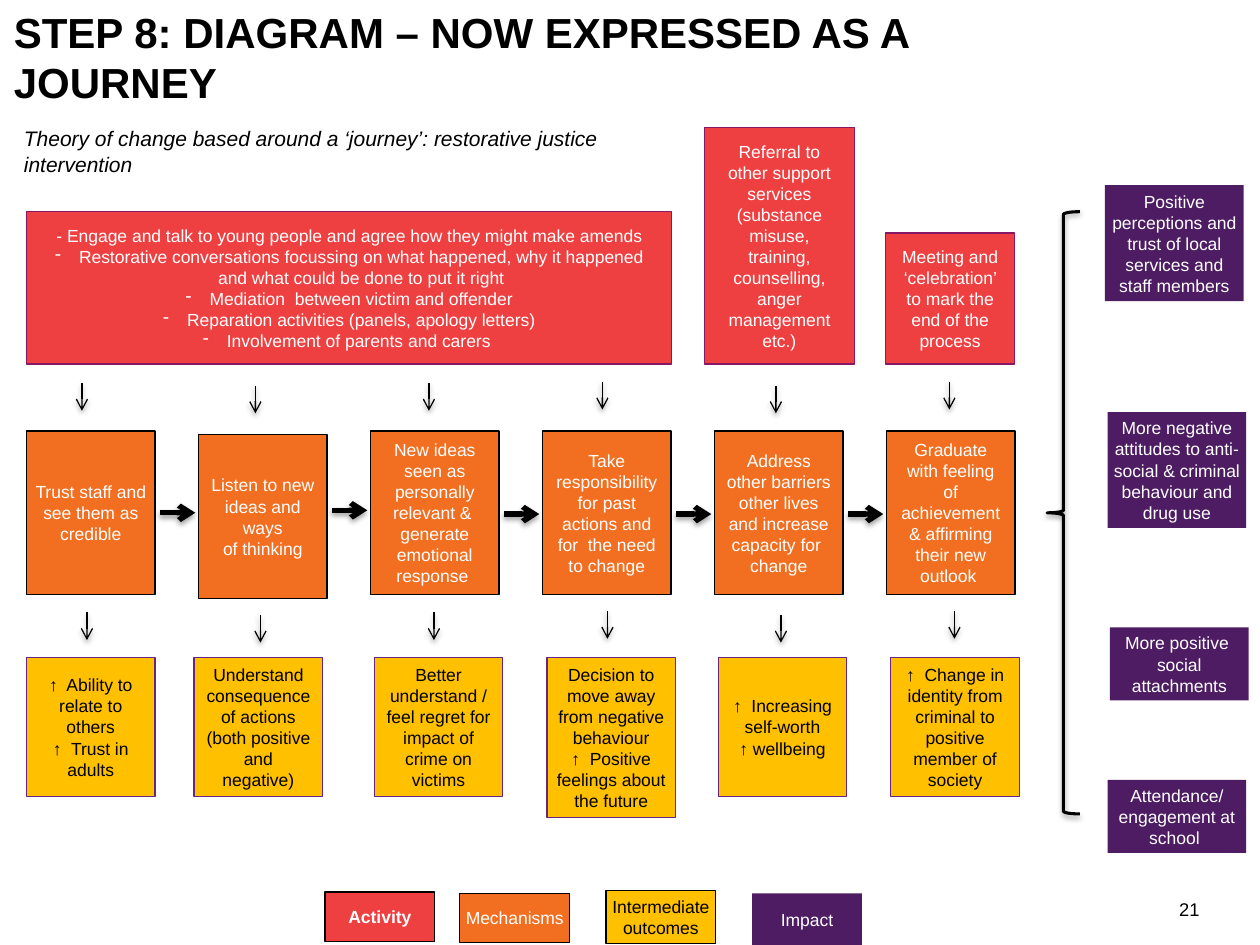
from lxml import etree
from pptx import Presentation
from pptx import util as u
from pptx.dml.color import RGBColor
from pptx.enum import shapes, text
from pptx.oxml.ns import qn

COLOURS = {
    "activity": "EE4041", "mechanism": "F26F21", "outcome": "FFC000",
    "impact": "4D1C62", "activity_edge": "881866", "outcome_edge": "662583",
    "black": "000000", "white": "FFFFFF",
}
COLUMN_PITCH = 1.365
ARROW_PITCH = 1.377
CARD_WIDTH = 1.02
TIGHT = (0.04, 0.04)
NORMAL = (0.1, 0.05)


def colour(name):
    return RGBColor.from_string(COLOURS[name])


def add_child(parent, tag, **attributes):
    child = etree.SubElement(parent, qn(tag))
    for name, value in attributes.items():
        child.set(name, str(value))
    return child


def write_text(shape, content, size=10, fill="white", bold=False, italic=False,
               align="CENTER", anchor="MIDDLE", insets=NORMAL, grow=False, bullets=False):
    """Write one paragraph per line; with bullets, all but the first get a dash."""
    frame = shape.text_frame
    frame.word_wrap = True
    frame.auto_size = text.MSO_AUTO_SIZE.SHAPE_TO_FIT_TEXT if grow else text.MSO_AUTO_SIZE.NONE
    frame.vertical_anchor = text.MSO_ANCHOR[anchor]
    frame.margin_left = frame.margin_right = u.Inches(insets[0])
    frame.margin_top = frame.margin_bottom = u.Inches(insets[1])
    for index, line in enumerate(content.split("\n")):
        paragraph = frame.add_paragraph() if index else frame.paragraphs[0]
        paragraph.alignment = text.PP_ALIGN[align]
        if bullets and index:
            properties = paragraph._p.get_or_add_pPr()
            properties.set("marL", str(u.Inches(0.19)))
            properties.set("indent", str(-u.Inches(0.19)))
            add_child(properties, "a:buFontTx")
            add_child(properties, "a:buChar", char="-")
        run = paragraph.add_run()
        run.text = line
        font = run.font
        font.name, font.size = "Arial", u.Pt(size)
        font.bold, font.italic = bold, italic
        font.color.rgb = colour(fill)


def add_label(slide, box, content, **text_format):
    label = slide.shapes.add_textbox(*map(u.Inches, box))
    write_text(label, content, insets=(0, 0), fill="black", **text_format)


def add_card(slide, box, kind, content, edge=None, **text_format):
    card = slide.shapes.add_shape(shapes.MSO_SHAPE.RECTANGLE, *map(u.Inches, box))
    card.shadow.inherit = False
    card.fill.solid()
    card.fill.fore_color.rgb = colour(kind)
    if edge:
        card.line.color.rgb = colour(edge)
        card.line.width = u.Pt(0.75)
    else:
        card.line.fill.background()
    write_text(card, content, fill="black" if kind == "outcome" else "white", **text_format)


def add_soft_shadow(shape):
    effects = add_child(shape._element.spPr, "a:effectLst")
    shadow = add_child(effects, "a:outerShdw", blurRad=u.Pt(3.1), dist=u.Pt(1.6),
                       dir=90 * 60000, rotWithShape=0)
    shade = add_child(shadow, "a:srgbClr", val=COLOURS["black"])
    add_child(shade, "a:alpha", val=38000)


def add_arrow(slide, left, top, across=0, down=0, width=0.75):
    arrow = slide.shapes.add_connector(
        shapes.MSO_CONNECTOR.STRAIGHT,
        *map(u.Inches, (left, top, left + across, top + down)))
    arrow.line.color.rgb = colour("black")
    arrow.line.width = u.Pt(width)
    add_child(arrow.line._get_or_add_ln(), "a:tailEnd", type="arrow")
    add_soft_shadow(arrow)


def add_activities(slide, left, bottom):
    activities = [  # offset, width, height, text
        (0, 5.12, 1.21,
         "- Engage and talk to young people and agree how they might make amends\n"
         "Restorative conversations focussing on what happened, why it happened "
         "and what could be done to put it right\n"
         "Mediation  between victim and offender\n"
         "Reparation activities (panels, apology letters)\n"
         "Involvement of parents and carers "),
        (5.38, 1.19, 1.88,
         "Referral to other support services (substance misuse, training, "
         "counselling, anger management etc.)"),
        (6.82, CARD_WIDTH, 1.04, "Meeting and ‘celebration’ to mark the end of the process"),
    ]
    for offset, width, height, content in activities:
        add_card(slide, (left + offset, bottom - height, width, height), "activity",
                 content, edge="activity_edge", bullets=True)


def add_mechanisms(slide, left, top):
    mechanisms = [  # vertical offset, insets, text
        (0, TIGHT, "Trust staff and see them as credible"),
        (0.03, TIGHT, "Listen to new ideas and ways\nof thinking"),
        (0, TIGHT, "New ideas seen as personally relevant &  generate emotional response "),
        (0, NORMAL, "Take responsibility for past\nactions and for  the need to change"),
        (0, NORMAL, "Address other barriers other lives and increase capacity for  change"),
        (0, NORMAL, "Graduate with feeling of achievement & affirming their new\noutlook "),
    ]
    for column, (offset, insets, content) in enumerate(mechanisms):
        add_card(slide, (left + column * COLUMN_PITCH, top + offset, CARD_WIDTH, 1.3),
                 "mechanism", content, edge="black", insets=insets, grow=insets == TIGHT)
    # Thick arrows from one step to the next
    for column, offset in enumerate((0.65, 0.63, 0.66, 0.66, 0.66)):
        add_arrow(slide, left + 1.06 + column * COLUMN_PITCH, top + offset,
                  across=0.28, width=3)


def add_outcomes(slide, left, top):
    outcomes = [  # horizontal offset, height, insets, text
        (0, 1.1, NORMAL, "↑  Ability to relate to others\n↑  Trust in adults"),
        (1.33, 1.1, NORMAL,
         "Understand consequence\nof actions (both positive and\nnegative)"),
        (2.76, 1.1, NORMAL, "Better understand / feel regret for impact of crime on victims"),
        (4.13, 1.27, (0.04, 0.05),
         "Decision to move away from negative behaviour\n"
         "↑  Positive feelings about the future"),
        (5.49, 1.1, NORMAL, "↑  Increasing self-worth\n↑ wellbeing"),
        (6.86, 1.1, NORMAL, "↑  Change in identity from criminal to positive member of society"),
    ]
    for offset, height, insets, content in outcomes:
        add_card(slide, (left + offset, top, CARD_WIDTH, height), "outcome", content,
                 edge="outcome_edge", insets=insets)


def add_down_arrows(slide, left, top):
    for column, offset in enumerate((0.01, 0.03, 0.01, 0, 0.03, 0)):
        add_arrow(slide, left + column * ARROW_PITCH, top + offset, down=0.22)


def add_impacts(slide, left, top):
    # Brace that gathers the journey into its impacts
    brace = slide.shapes.add_shape(shapes.MSO_SHAPE.RIGHT_BRACE, u.Inches(left),
                                   u.Inches(top + 0.21), u.Inches(0.26), u.Inches(4.78))
    brace.rotation = 180
    brace.fill.background()
    brace.line.color.rgb = colour("black")
    brace.line.width = u.Pt(1.75)
    add_soft_shadow(brace)
    impacts = [  # offsets, height, text
        (0.46, 0, 0.92, "Positive perceptions and trust of local services and staff members"),
        (0.48, 1.8, 0.92,
         "More negative attitudes to anti-social & criminal behaviour and drug use"),
        (0.5, 3.51, 0.58, "More positive  social attachments"),
        (0.48, 4.72, 0.58, "Attendance/engagement at school "),
    ]
    for across, down, height, content in impacts:
        add_card(slide, (left + across, top + down, 1.1, height), "impact", content,
                 insets=TIGHT, grow=True)


def add_legend(slide, left, top):
    entries = [  # offsets, height, kind, text
        (0, 0.01, 0.39, "activity", "Activity"),
        (1.07, 0.02, 0.39, "mechanism", "Mechanisms"),
        (2.23, 0, 0.42, "outcome", "Intermediate outcomes"),
        (3.39, 0.02, 0.42, "impact", "Impact"),
    ]
    for across, down, height, kind, content in entries:
        add_card(slide, (left + across, top + down, 0.87, height), kind, content,
                 edge=None if kind == "impact" else "black", bold=kind == "activity",
                 insets=TIGHT, grow=True)


def main():
    presentation = Presentation()
    presentation.slide_width, presentation.slide_height = u.Inches(10), u.Inches(7.5)
    slide = presentation.slides.add_slide(presentation.slide_layouts[6])
    # Headings
    add_label(slide, (0.11, 0.05, 8.45, 0.5), "STEP 8: DIAGRAM – NOW EXPRESSED AS A JOURNEY",
              size=24, bold=True, align="LEFT", anchor="TOP")
    add_label(slide, (0.19, 1, 4.63, 0.45),
              "Theory of change based around a ‘journey’: restorative justice intervention",
              size=12, italic=True, align="LEFT", anchor="TOP")
    # Journey, row by row
    add_activities(slide, 0.21, 2.89)
    add_down_arrows(slide, 0.65, 3.03)
    add_mechanisms(slide, 0.21, 3.42)
    add_down_arrows(slide, 0.69, 4.85)
    add_outcomes(slide, 0.21, 5.22)
    add_impacts(slide, 8.31, 1.47)
    # Footer
    add_legend(slide, 2.58, 7.07)
    add_label(slide, (9.02, 7.05, 0.5, 0.25), "21", size=10.5, align="RIGHT", anchor="BOTTOM")
    presentation.save("out.pptx")


if __name__ == "__main__":
    main()
